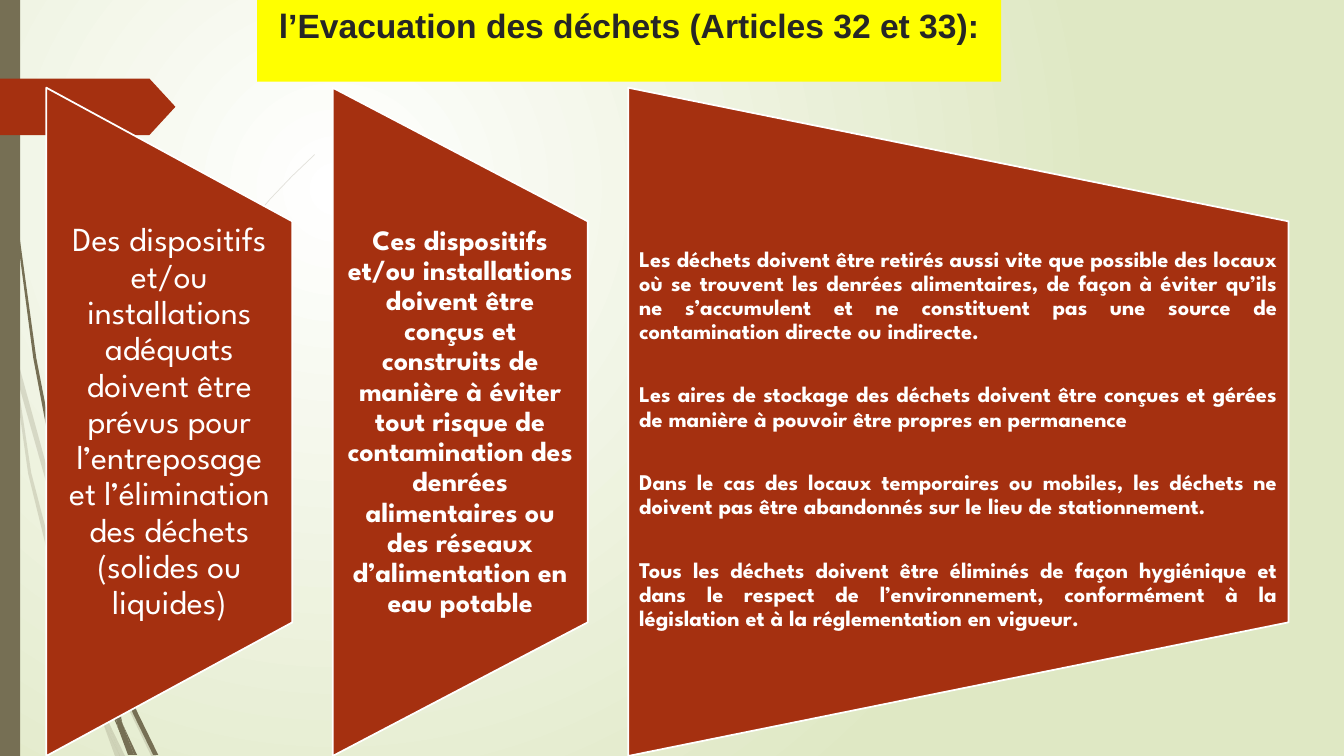
from lxml import etree
from pptx import Presentation
from pptx import util as u
from pptx.dml.color import RGBColor
from pptx.enum import shapes, text
from pptx.oxml.ns import qn

PX = 9144  # EMU per px, 100 px to the inch
RED, OLIVE, WHITE = "A53010", "766F54", "FFFFFF"
FONT = "League Spartan"

# Outlines of the grass blades, in px
PALE_BLADES = [
    [(11, 350), (9, 322), (0, 282), (0, 299), (10, 344)],
    [(58, 522), (84, 599), (85, 586), (62, 520), (14, 345), (17, 376)],
    [(92, 607), (88, 596), (88, 610), (123, 694), (150, 750), (155, 750), (127, 692)],
    [(119, 750), (124, 750), (105, 711)],
    [(93, 683), (70, 619), (31, 469), (17, 376), (11, 350), (28, 470),
     (65, 621), (92, 693), (101, 714), (99, 707)],
    [(84, 599), (87, 646), (93, 683), (96, 692), (105, 711), (103, 706),
     (91, 646), (88, 610), (88, 608)],
    [(88, 584), (110, 462), (160, 349), (229, 245), (268, 198), (290, 175),
     (312, 154), (312, 153), (289, 175), (268, 197), (228, 244), (158, 348),
     (107, 461), (85, 584), (85, 586), (88, 596)],
    [(101, 714), (114, 750), (119, 750)],
    [(88, 608), (88, 610), (88, 596), (85, 586), (84, 599)],
    [(96, 692), (93, 683), (99, 707), (101, 714), (119, 750), (105, 711)],
]
DARK_BLADES = [
    [(7, 110), (17, 233), (33, 355), (56, 477), (57, 481), (55, 457), (55, 453),
     (36, 355), (19, 232), (8, 109), (5, 48), (4, 0), (3, 0), (4, 48)],
    [(88, 592), (106, 645), (106, 633), (106, 631), (93, 590), (60, 472), (64, 505)],
    [(113, 649), (110, 641), (111, 656), (132, 708), (152, 749), (157, 749), (136, 706)],
    [(110, 691), (98, 657), (72, 556), (64, 505), (57, 477), (68, 557),
     (93, 659), (111, 708), (117, 722), (116, 717)],
    [(60, 472), (58, 453), (54, 349), (58, 245), (63, 193), (70, 141),
     (62, 193), (56, 245), (52, 349), (55, 449)],
    [(133, 749), (136, 749), (122, 719)],
    [(57, 477), (64, 505), (60, 472), (55, 449), (55, 453)],
    [(111, 633), (125, 552), (158, 476), (205, 406), (231, 374), (245, 359),
     (261, 344), (260, 344), (245, 358), (231, 373), (204, 405), (156, 474),
     (122, 551), (106, 631), (110, 641)],
    [(117, 722), (127, 749), (131, 749)],
    [(106, 645), (110, 691), (116, 706), (122, 719), (121, 716), (111, 656), (109, 651)],
    [(106, 645), (109, 651), (111, 656), (110, 641), (106, 631), (106, 633)],
    [(116, 706), (110, 691), (116, 717), (117, 722), (130, 749), (133, 749), (122, 719)],
]

# Panels: width, side inset, text format, paragraphs
PANELS = [
    (244, 17, dict(size=24, bold=False, align="CENTER"), [
        "Des dispositifs et/ou installations adéquats doivent être prévus pour "
        "l’entreposage et l’élimination des déchets (solides ou liquides)"]),
    (253, 14, dict(size=20, bold=True, align="CENTER"), [
        "Ces dispositifs et/ou installations doivent être conçus et construits de "
        "manière à éviter tout risque de contamination des denrées alimentaires ou "
        "des réseaux d’alimentation en eau potable"]),
    (655, 11, dict(size=16, bold=True, align="JUSTIFY", top=34), [
        "Les déchets doivent être retirés aussi vite que possible des locaux où se "
        "trouvent les denrées alimentaires, de façon à éviter qu’ils ne s’accumulent "
        "et ne constituent pas une source de contamination directe ou indirecte.",
        "Les aires de stockage des déchets doivent être conçues et gérées de manière "
        "à pouvoir être propres en permanence",
        "Dans le cas des locaux temporaires ou mobiles, les déchets ne doivent pas "
        "être abandonnés sur le lieu de stationnement.",
        "Tous les déchets doivent être éliminés de façon hygiénique et dans le respect "
        "de l’environnement, conformément à la législation et à la réglementation en "
        "vigueur."]),
]
PANEL_LEFT, PANEL_TOP, PANEL_HEIGHT, PANEL_GAP = 46, 87, 663, 40
TEXT_TOP, TEXT_HEIGHT = 220, 398


def px(*values):
    return [u.Emu(round(v * PX)) for v in values]


def rgb(value):
    return RGBColor.from_string(value)


def set_attrs(obj, values):
    for name, value in values.items():
        setattr(obj, name, value)


def paint(sp, fill, line=None):
    sp.shadow.inherit = False
    sp.fill.solid()
    sp.fill.fore_color.rgb = rgb(fill)
    if line:
        sp.line.color.rgb = rgb(line)
        sp.line.width = u.Pt(1.25)
    else:
        sp.line.fill.background()


def add_preset(s, kind, box, fill, line=None):
    sp = s.shapes.add_shape(kind, *px(*box))
    paint(sp, fill, line)
    return sp


def add_blade(s, points, opacity):
    builder = s.shapes.build_freeform(*points[0], scale=PX)
    builder.add_line_segments(points[1:], close=True)
    sp = builder.convert_to_shape()
    paint(sp, OLIVE)
    if opacity < 100:
        color = sp.fill._xPr.find(".//" + qn("a:srgbClr"))
        etree.SubElement(color, qn("a:alpha"), val=str(opacity * 1000))


def add_text(s, box, inset, fmt, paragraphs):
    tf = s.shapes.add_textbox(*px(*box)).text_frame
    side, top = px(inset, fmt.get("top", 0))
    set_attrs(tf, dict(word_wrap=True, vertical_anchor=text.MSO_ANCHOR.MIDDLE,
                       margin_left=side, margin_right=side,
                       margin_top=top, margin_bottom=0))
    for i, words in enumerate(paragraphs):
        p = tf.add_paragraph() if i else tf.paragraphs[0]
        set_attrs(p, dict(alignment=text.PP_ALIGN[fmt["align"]], line_spacing=0.9,
                          space_before=u.Pt(28 if i else 0)))
        r = p.add_run()
        r.text = words
        set_attrs(r.font, dict(name=FONT, size=u.Pt(fmt["size"]), bold=fmt["bold"]))
        r.font.color.rgb = rgb(WHITE)


def add_panel(s, left, width, inset, fmt, paragraphs):
    # The trapezoid lies on its side, so its box is turned about its centre
    cx, cy = left + width / 2, PANEL_TOP + PANEL_HEIGHT / 2
    box = (cx - PANEL_HEIGHT / 2, cy - width / 2, PANEL_HEIGHT, width)
    sp = add_preset(s, shapes.MSO_SHAPE.FLOWCHART_MANUAL_OPERATION, box, RED, WHITE)
    sp.rotation = 270
    add_text(s, (left, TEXT_TOP, width, TEXT_HEIGHT), inset, fmt, paragraphs)


def set_background(s):
    fill = s.background.fill
    fill.gradient()
    for stop, color in zip(fill.gradient_stops, (WHITE, "DFE8C4")):
        stop.color.rgb = rgb(color)
    lin = s.element.find(".//" + qn("a:lin"))
    circle = etree.Element(qn("a:path"), path="circle")
    etree.SubElement(circle, qn("a:fillToRect"),
                     l="50000", t="50000", r="100000", b="100000")
    lin.getparent().replace(lin, circle)


def set_title(s, words):
    sp = s.shapes.title
    set_attrs(sp, dict(zip(("left", "top", "width", "height"), px(255, 0, 738, 81))))
    sp.fill.solid()
    sp.fill.fore_color.rgb = rgb("FFFF00")
    tf = sp.text_frame
    set_attrs(tf, dict(word_wrap=True, vertical_anchor=text.MSO_ANCHOR.TOP))
    p = tf.paragraphs[0]
    p.alignment = text.PP_ALIGN.CENTER
    r = p.add_run()
    r.text = words
    set_attrs(r.font, dict(name="Arial", size=u.Pt(24), bold=True))
    r.font.color.rgb = rgb("262626")


def main():
    prs = Presentation()
    prs.slide_width, prs.slide_height = px(1333, 750)
    s = prs.slides.add_slide(prs.slide_layouts[5])
    set_background(s)
    set_title(s, "l’Evacuation des déchets (Articles 32 et 33):")

    # Decoration on the left edge
    for blades, opacity in ((PALE_BLADES, 20), (DARK_BLADES, 100)):
        for points in blades:
            add_blade(s, points, opacity)
    add_preset(s, shapes.MSO_SHAPE.RECTANGLE, (0, 0, 20, 750), OLIVE)
    tag = add_preset(s, shapes.MSO_SHAPE.PENTAGON, (0, 78, 174, 56), RED)
    tag.adjustments[0] = 0.46

    # Three panels in a row
    left = PANEL_LEFT
    for width, inset, fmt, paragraphs in PANELS:
        add_panel(s, left, width, inset, fmt, paragraphs)
        left += width + PANEL_GAP

    prs.save("out.pptx")


if __name__ == "__main__":
    main()
